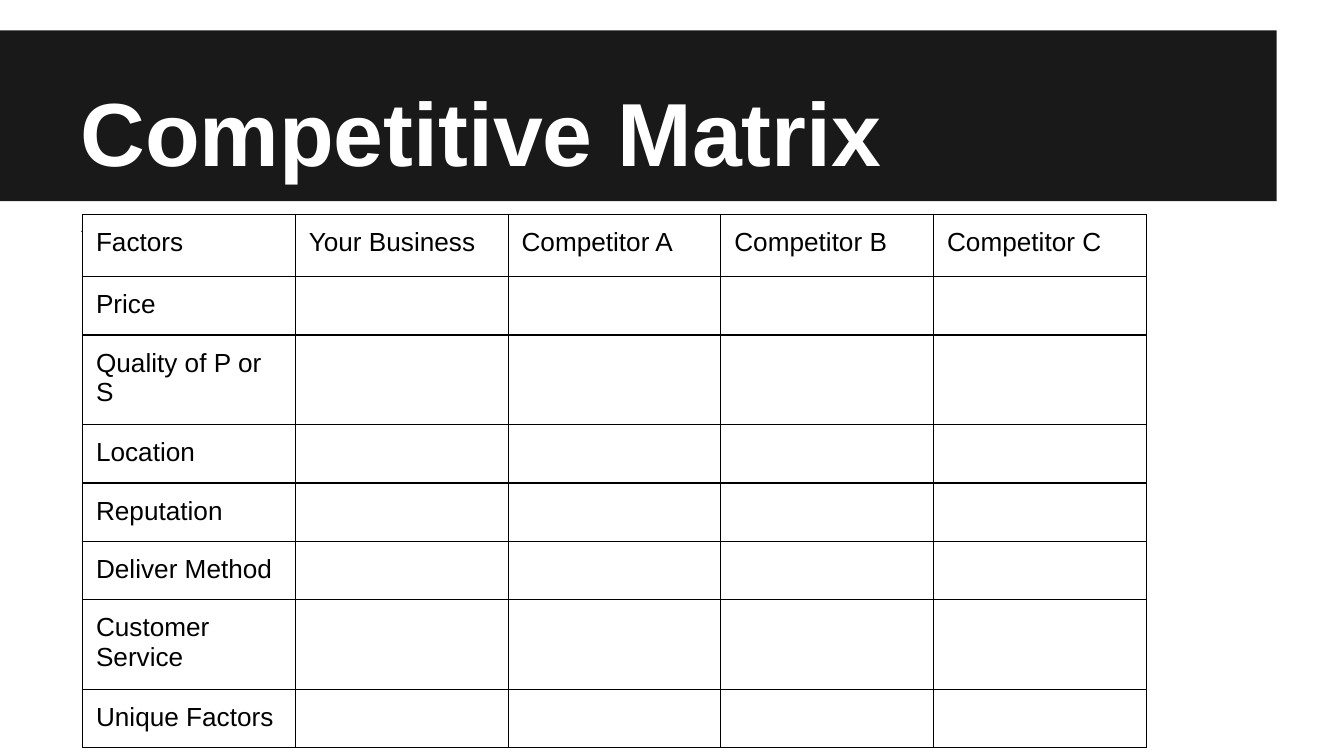
"""Build the Competitive Matrix slide."""
from lxml.etree import SubElement
from pptx import Presentation
from pptx.dml.color import RGBColor as RGB
from pptx.enum.shapes import MSO_SHAPE as SHAPE
from pptx.enum.text import MSO_ANCHOR as ANCHOR
from pptx.oxml import parse_xml
from pptx.oxml.ns import nsdecls, qn
from pptx.util import Pt

PX = 3175
C = {"band": "191919", "title": "FFFFFF", "text": "000000", "border": "000000"}
HEADS = ["Factors", "Your Business", "Competitor A", "Competitor B", "Competitor C"]
FACTORS = ["Price", "Quality of P or S", "Location", "Reputation",
           "Deliver Method", "Customer Service", "Unique Factors"]
ROW_H = [133, 120, 124, 124, 120, 120, 120, 120]
COL_W = 456
INSETS = {f"margin_{side}": Pt(7.2) for side in ("left", "top", "right", "bottom")}


def write(p, text, size, color, bold=False):
    r = p.add_run()
    r.text = text
    for name, value in {"name": "Arial", "size": Pt(size), "bold": bold}.items():
        setattr(r.font, name, value)
    r.font.color.rgb = RGB.from_string(C[color])


prs = Presentation()
prs.slide_width, prs.slide_height = 2880 * PX, 1620 * PX
s = prs.slides.add_slide(prs.slide_layouts[6])

band = s.shapes.add_shape(SHAPE.RECTANGLE, 0, 65 * PX, 2736 * PX, 366 * PX)
band.shadow.inherit = False
band.fill.solid()
band.fill.fore_color.rgb = RGB.from_string(C["band"])
band.line.fill.background()

for text, top, height, size, color, bold, anchor in [
    ("Competitive Matrix", 65, 360, 48, "title", True, ANCHOR.BOTTOM),
    (".", 460, 1092, 6, "band", False, ANCHOR.TOP),
]:
    sp = s.shapes.add_textbox(144 * PX, top * PX, 2592 * PX, height * PX)
    tf = sp.text_frame
    for name, value in {**INSETS, "word_wrap": True, "vertical_anchor": anchor}.items():
        setattr(tf, name, value)
    write(tf.paragraphs[0], text, size, color, bold)

frame = s.shapes.add_table(len(ROW_H), len(HEADS), 177 * PX, 460 * PX,
                           COL_W * len(HEADS) * PX, sum(ROW_H) * PX)
table = frame.table
table.first_row = table.horz_banding = False
for col in table.columns:
    col.width = COL_W * PX
for row, height in zip(table.rows, ROW_H):
    row.height = height * PX
frame.height = 1140 * PX

rows = [HEADS] + [[factor] + [""] * (len(HEADS) - 1) for factor in FACTORS]
for i, texts in enumerate(rows):
    for j, text in enumerate(texts):
        cell = table.cell(i, j)
        for name, value in INSETS.items():
            setattr(cell, name, value)
        cell.fill.background()
        p = cell.text_frame.paragraphs[0]
        if text:
            write(p, text, 14, "text")
        end = SubElement(p._p, qn("a:endParaRPr"), sz="1400")
        SubElement(end, qn("a:latin"), typeface="Arial")
        tc_pr = cell._tc.get_or_add_tcPr()
        for k, edge in enumerate(("lnL", "lnR", "lnT", "lnB")):
            tc_pr.insert(k, parse_xml(
                f'<a:{edge} {nsdecls("a")} w="{Pt(0.75)}"><a:solidFill>'
                f'<a:srgbClr val="{C["border"]}"/></a:solidFill></a:{edge}>'))

prs.save("out.pptx")
